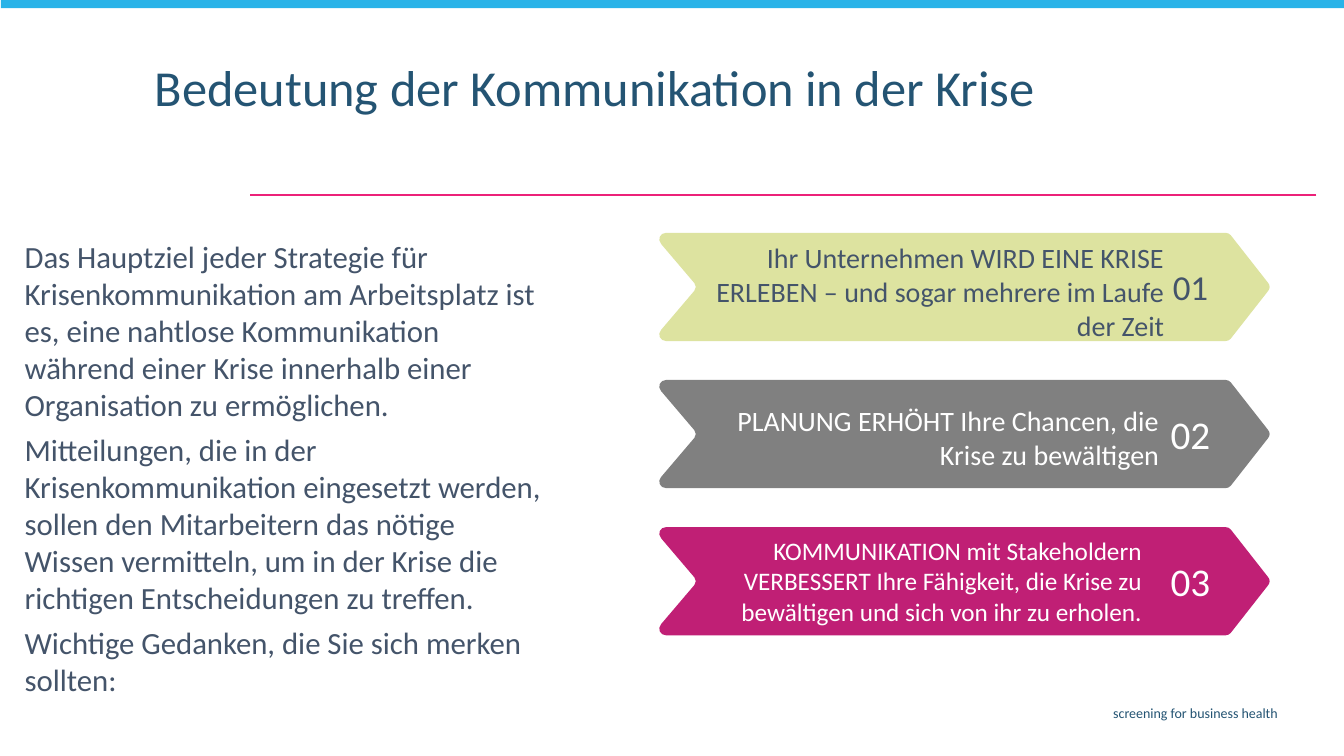
import pptx
import pptx.util
import pptx.dml.color
import pptx.enum.shapes
import pptx.enum.text
import pptx.oxml.ns
import lxml.etree

Pt = pptx.util.Pt
RGBColor = pptx.dml.color.RGBColor
ALIGN = pptx.enum.text.PP_ALIGN
ANCHOR = pptx.enum.text.MSO_ANCHOR
AUTO_SIZE = pptx.enum.text.MSO_AUTO_SIZE
qn = pptx.oxml.ns.qn

SKY = RGBColor(0x29, 0xB3, 0xE8)
PINK = RGBColor(0xEC, 0x21, 0x79)
NAVY = RGBColor(0x24, 0x54, 0x73)
SLATE = RGBColor(0x44, 0x54, 0x6A)
LIME = RGBColor(0xDD, 0xE3, 0xA0)
GREY = RGBColor(0x80, 0x80, 0x80)
MAGENTA = RGBColor(0xC0, 0x1F, 0x75)
WHITE = RGBColor(0xFF, 0xFF, 0xFF)

FONT = "Calibri"
ARROW_WIDTH = 436.3
ARROW_HEIGHT = 77.3
ARROW_PITCH = 105.1

GOALS = [
    "Das Hauptziel jeder Strategie für Krisenkommunikation am Arbeitsplatz ist es, "
    "eine nahtlose Kommunikation während einer Krise innerhalb einer Organisation zu ermöglichen.",
    "Mitteilungen, die in der Krisenkommunikation eingesetzt werden, sollen den Mitarbeitern "
    "das nötige Wissen vermitteln, um in der Krise die richtigen Entscheidungen zu treffen.",
    "Wichtige Gedanken, die Sie sich merken sollten:",
]

THOUGHTS = [
    (LIME, SLATE, 25, 20, (20.2, 4.3, 342, 75.6),
     "Ihr Unternehmen WIRD EINE KRISE ERLEBEN – und sogar mehrere im Laufe der Zeit"),
    (GREY, WHITE, 28, 20, (24.5, 15.4, 334.1, 46.1),
     "PLANUNG ERHÖHT Ihre Chancen, die Krise zu bewältigen"),
    (MAGENTA, WHITE, 28, 18, (4.3, 4.5, 342, 67.7),
     "KOMMUNIKATION mit Stakeholdern VERBESSERT Ihre Fähigkeit, die Krise zu bewältigen "
     "und sich von ihr zu erholen."),
]


def write(frame, texts, size, color, inset, align=ALIGN.LEFT, anchor=ANCHOR.TOP, gap=0,
          wrap=True, fit=AUTO_SIZE.SHAPE_TO_FIT_TEXT):
    frame.word_wrap = wrap
    frame.auto_size = fit
    frame.vertical_anchor = anchor
    frame.margin_left = frame.margin_right = Pt(inset)
    frame.margin_top = frame.margin_bottom = Pt(inset)
    for index, text in enumerate(texts):
        paragraph = frame.add_paragraph() if index else frame.paragraphs[0]
        paragraph.text = text
        paragraph.alignment = align
        paragraph.space_before = Pt(gap if index else 0)
        paragraph.font.name = FONT
        paragraph.font.size = Pt(size)
        paragraph.font.color.rgb = color


def add_text(slide, box, texts, size, color, inset, **layout):
    textbox = slide.shapes.add_textbox(*map(Pt, box))
    write(textbox.text_frame, texts, size, color, inset, **layout)


def add_frame(slide, left, top, width):
    banner = slide.shapes.add_shape(
        pptx.enum.shapes.MSO_SHAPE.RECTANGLE, Pt(left), Pt(top), Pt(width), Pt(7.2))
    banner.shadow.inherit = False
    banner.fill.solid()
    banner.fill.fore_color.rgb = SKY
    banner.line.fill.background()
    rule = slide.shapes.add_connector(
        pptx.enum.shapes.MSO_CONNECTOR.STRAIGHT,
        Pt(left + 939.6), Pt(top + 140.4), Pt(left + 177.9), Pt(top + 140.4))
    rule.line.color.rgb = PINK
    rule.line.width = Pt(1.5)
    properties = rule._element.find(qn("p:spPr"))
    lxml.etree.SubElement(properties, qn("a:effectLst"))
    add_text(slide, (left + 265.4, top + 501.1, 650.2, 18), ["screening for business health"],
             10, NAVY, 3.6, align=ALIGN.RIGHT)


def add_title(slide, left, top, width, height):
    title = slide.shapes.title
    title.left, title.top, title.width, title.height = map(Pt, (left, top, width, height))
    write(title.text_frame, ["Bedeutung der Kommunikation in der Krise"], 36, NAVY, 3.6,
          fit=AUTO_SIZE.NONE)
    title.text_frame.paragraphs[0].line_spacing = 0.9


def mirrored(corner):
    return [(x, ARROW_HEIGHT - y) for x, y in reversed(corner)]


def add_segment(outline, kind, points):
    segment = lxml.etree.SubElement(outline, qn(kind))
    for x, y in points:
        lxml.etree.SubElement(segment, qn("a:pt"), x=str(Pt(x)), y=str(Pt(y)))


def add_arrow(slide, left, top, fill):
    tail = [(1.5, 8), (-1.5, 4.8), (0.7, 0), (5, 0)]
    shoulder = [(404.6, 0), (406, 0), (407.4, 0.6), (408.3, 1.7)]
    tip = [(434.9, 35.6), (436.5, 37.4), (436.5, 39.9), (434.9, 41.7)]
    notch = [(25.2, 41.4), (26.6, 39.9), (26.6, 37.4), (25.2, 35.9)]
    corners = (tail, shoulder, tip, mirrored(shoulder), mirrored(tail), notch)

    right, bottom = left + ARROW_WIDTH, top + ARROW_HEIGHT
    builder = slide.shapes.build_freeform(Pt(left), Pt(top))
    builder.add_line_segments(
        [(Pt(right), Pt(top)), (Pt(right), Pt(bottom)), (Pt(left), Pt(bottom))])
    arrow = builder.convert_to_shape()
    outline = next(arrow._element.iter(qn("a:path")))
    for segment in list(outline):
        outline.remove(segment)
    for index, (start, *bend) in enumerate(corners):
        add_segment(outline, "a:lnTo" if index else "a:moveTo", [start])
        add_segment(outline, "a:cubicBezTo", bend)
    lxml.etree.SubElement(outline, qn("a:close"))

    arrow.shadow.inherit = False
    arrow.fill.solid()
    arrow.fill.fore_color.rgb = fill
    arrow.line.fill.background()


def add_thoughts(slide, left, top):
    for index, (fill, *_) in enumerate(THOUGHTS):
        add_arrow(slide, left, top + index * ARROW_PITCH, fill)
    for index, (_, ink, number_size, size, (x, y, width, height), text) in enumerate(THOUGHTS):
        arrow_top = top + index * ARROW_PITCH
        number_height = 1.27 * number_size
        number_top = arrow_top + (ARROW_HEIGHT - number_height) / 2
        add_text(slide, (left + 361.2, number_top, 36.7, number_height), [f"{index + 1:02}"],
                 number_size, ink, 3.6, align=ALIGN.CENTER, anchor=ANCHOR.MIDDLE, wrap=False)
        add_text(slide, (left + x, arrow_top + y, width, height), [text],
                 size, ink, 1.44, align=ALIGN.RIGHT)


def main():
    presentation = pptx.Presentation()
    presentation.slide_width, presentation.slide_height = Pt(960), Pt(540)
    slide = presentation.slides.add_slide(presentation.slide_layouts[5])
    add_frame(slide, 0.7, -1.4, 960.5)
    add_title(slide, 107, 41.5, 697, 54.7)
    add_text(slide, (14.7, 166.8, 380.2, 349.9), GOALS, 22, SLATE, 2.88, gap=6)
    add_thoughts(slide, 470.8, 166.3)
    presentation.save("out.pptx")


if __name__ == "__main__":
    main()
